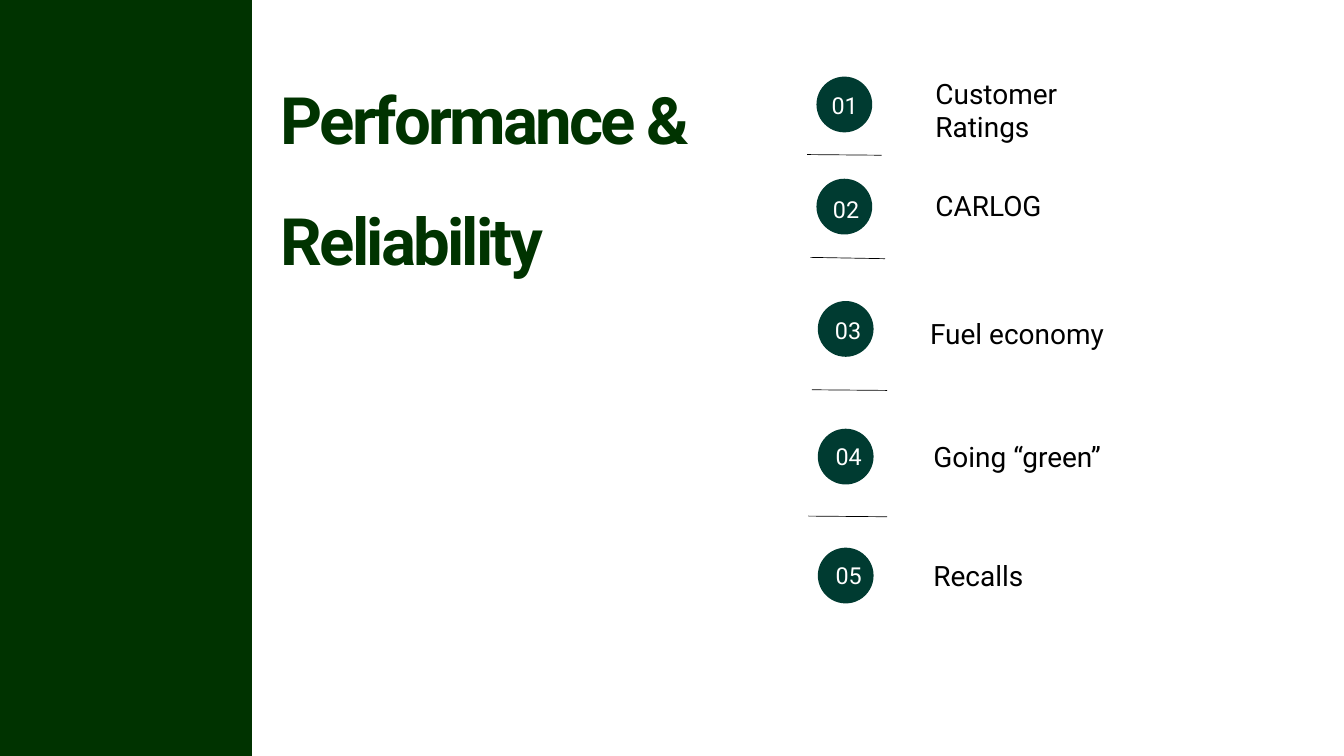
from collections import namedtuple
from dataclasses import dataclass

from lxml.etree import SubElement
from pptx import Presentation
from pptx.dml.color import RGBColor
from pptx.enum.shapes import MSO_CONNECTOR as Connector, MSO_SHAPE as Shape
from pptx.enum.text import MSO_ANCHOR as Anchor, MSO_AUTO_SIZE as AutoSize, PP_ALIGN as Align
from pptx.oxml.ns import qn
from pptx.util import Inches, Pt


@dataclass(frozen=True)
class Theme:
    """Colours, font and type sizes of the slide."""
    forest: RGBColor = RGBColor(0x00, 0x33, 0x00)
    teal: RGBColor = RGBColor(0x00, 0x3B, 0x31)
    white: RGBColor = RGBColor(0xFF, 0xFF, 0xFF)
    black: RGBColor = RGBColor(0x00, 0x00, 0x00)
    font: str = "Roboto"
    title_size: int = 70
    topic_size: int = 30
    number_size: int = 25
    title_leading: int = 130
    leading: int = 35
    rule_width: float = 0.75


THEME = Theme()
Box = namedtuple("Box", "left top width height")
Topic = namedtuple("Topic", "label badge number caption")
Rule = namedtuple("Rule", "left top right bottom")

BADGE_SIZE = 0.83
TOPICS = [
    Topic("Customer Ratings", (0.14, 0), (0.22, 0.03), (1.91, 0.01)),
    Topic("CARLOG", (0.14, 1.52), (0.24, 1.57), (1.91, 1.68)),
    Topic("Fuel economy", (0.16, 3.34), (0.27, 3.37), (1.83, 3.59)),
    Topic("Going “green”", (0.16, 5.24), (0.28, 5.25), (1.88, 5.42)),
    Topic("Recalls", (0.16, 7.01), (0.28, 7.02), (1.88, 7.18)),
]
RULES = [
    Rule(0, 1.16, 1.11, 1.17),
    Rule(0.05, 2.69, 1.16, 2.71),
    Rule(0.07, 4.66, 1.19, 4.67),
    Rule(0.02, 6.54, 1.19, 6.55),
]


def emu(box):
    """Convert a box in inches to lengths."""
    return [Inches(value) for value in box]


def write(shape, text, size, color, leading, align=Align.LEFT, anchor=Anchor.TOP, inset=0):
    """Set the wording and text style of a shape."""
    frame = shape.text_frame
    frame.text = text
    frame.word_wrap = True
    frame.auto_size = AutoSize.NONE
    frame.vertical_anchor = anchor
    frame.margin_left = frame.margin_right = Inches(inset)
    frame.margin_top = frame.margin_bottom = Inches(inset)
    paragraph = frame.paragraphs[0]
    paragraph.alignment = align
    paragraph.line_spacing = Pt(leading)
    run = paragraph.runs[0]
    run.font.name = THEME.font
    run.font.size = Pt(size)
    run.font.color.rgb = color
    return run


def add_block(slide, kind, box, color):
    """Add a plain filled shape."""
    block = slide.shapes.add_shape(kind, *emu(box))
    block.shadow.inherit = False
    block.fill.solid()
    block.fill.fore_color.rgb = color
    block.line.fill.background()


def add_title(slide, box):
    """Place and format the title."""
    title = slide.shapes.title
    title.left, title.top, title.width, title.height = emu(box)
    run = write(title, "Performance & Reliability", THEME.title_size,
                THEME.forest, THEME.title_leading)
    run.font.bold = True
    run.font.element.set("spc", "-300") if hasattr(run.font, "element") else run._r.get_or_add_rPr().set("spc", "-300")


def add_rule(slide, box, rule):
    """Draw a thin divider between two topics."""
    ends = (box.left + rule.left, box.top + rule.top,
            box.left + rule.right, box.top + rule.bottom)
    divider = slide.shapes.add_connector(Connector.STRAIGHT, *emu(ends))
    divider.line.color.rgb = THEME.black
    divider.line.width = Pt(THEME.rule_width)
    SubElement(divider._element.spPr, qn("a:effectLst"))


def add_topics(slide, box):
    """Add the numbered topics and their dividers."""
    def part(offset, width, height):
        """Locate a part inside the topic list."""
        return Box(box.left + offset[0], box.top + offset[1], width, height)

    for index, topic in enumerate(TOPICS, 1):
        add_block(slide, Shape.OVAL, part(topic.badge, BADGE_SIZE, BADGE_SIZE), THEME.teal)
        number = slide.shapes.add_textbox(*emu(part(topic.number, 0.68, 0.73)))
        write(number, f"{index:02}", THEME.number_size, THEME.white, THEME.leading,
              Align.CENTER, Anchor.MIDDLE, 0.06)
        height = 0.98 if index == 1 else 0.49
        caption = slide.shapes.add_textbox(*emu(part(topic.caption, 2.76, height)))
        write(caption, topic.label, THEME.topic_size, THEME.black, THEME.leading)
    for rule in RULES:
        add_rule(slide, box, rule)


def main():
    """Build and save the slide."""
    deck = Presentation()
    deck.slide_width, deck.slide_height = Inches(20), Inches(11.25)
    slide = deck.slides.add_slide(deck.slide_layouts[5])
    add_block(slide, Shape.RECTANGLE, Box(0, 0, 3.75, 11.25), THEME.forest)
    add_title(slide, Box(4.18, 0.54, 8.79, 3.44))
    add_topics(slide, Box(12.01, 1.14, 4.67, 7.84))
    deck.save("out.pptx")


if __name__ == "__main__":
    main()
